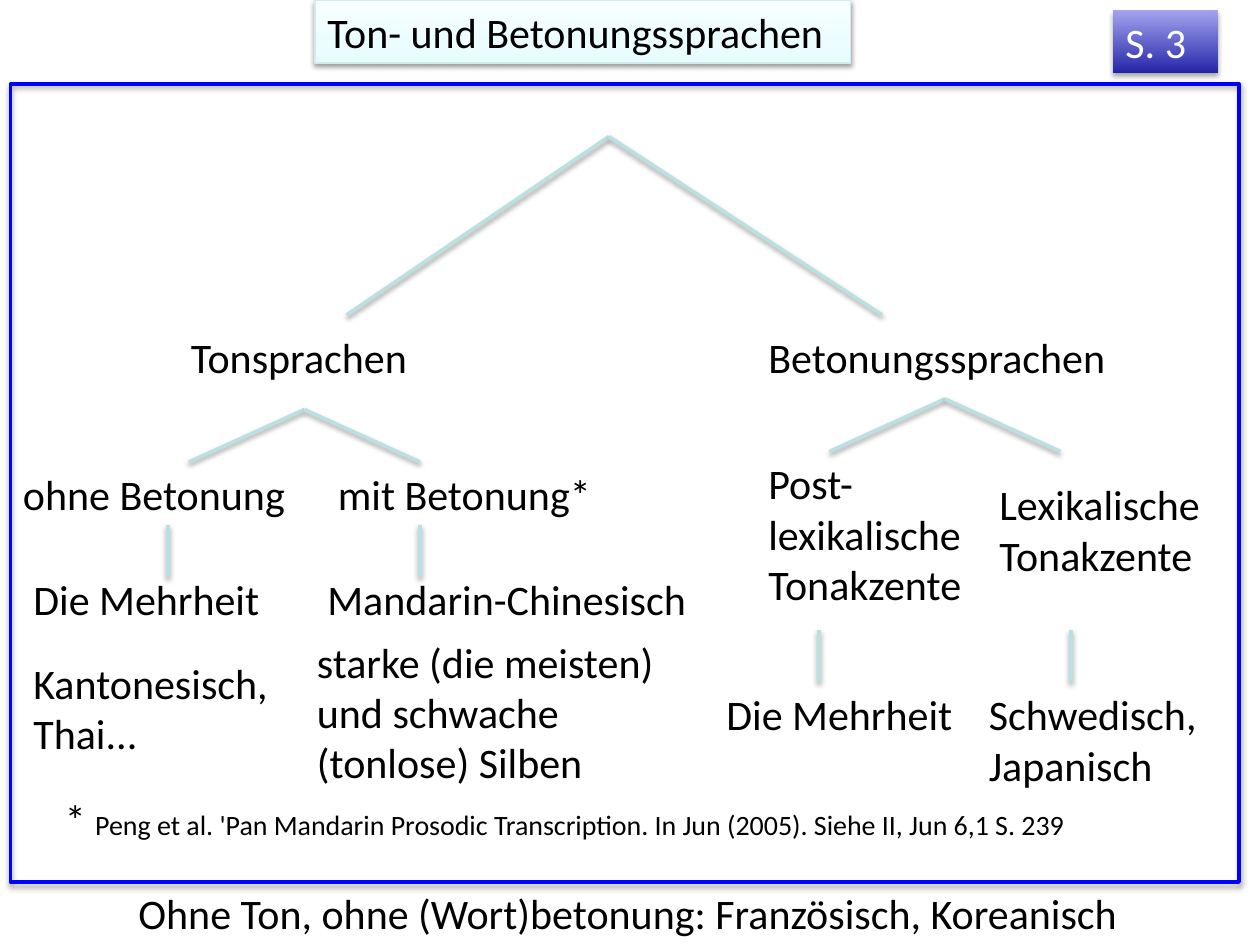
from copy import deepcopy

from lxml import etree
from pptx import Presentation
from pptx.dml.color import RGBColor
from pptx.enum.shapes import MSO_CONNECTOR, MSO_SHAPE
from pptx.enum.text import MSO_ANCHOR, MSO_AUTO_SIZE, PP_ALIGN
from pptx.oxml.ns import qn
from pptx.util import Pt

RECT = MSO_SHAPE.RECTANGLE
STRAIGHT = MSO_CONNECTOR.STRAIGHT
TOP = MSO_ANCHOR.TOP
GROW = MSO_AUTO_SIZE.SHAPE_TO_FIT_TEXT
LEFT = PP_ALIGN.LEFT

BLACK, WHITE, BLUE, BRANCH = "000000", "FFFFFF", "0000FF", "BBE0E3"
FRAME_FORMAT = {"vertical_anchor": TOP, "auto_size": GROW, "word_wrap": True}
LINE_HEIGHTS = {1: 36.5, 2: 65.5, 3: 94.5}
SOFT = {"alpha": 38, "dist": 1.6}
STRONG = {"alpha": 35, "dist": 1.8}

TITLE_STOPS = [(0, "E6FDFF"), (35, "ECFDFF"), (100, "F8FEFF")]
BADGE_STOPS = [(0, "2424A8"), (100, "A4A4EF")]

LABELS = [
    ("Tonsprachen", 102, 186, 150, 1),
    ("Betonungssprachen", 432, 186, 228, 1),
    ("ohne Betonung", 6, 264, 180, 1),
    ("mit Betonung*", 186, 264, 180, 1),
    ("Post-lexikalische Tonakzente", 432, 258, 150, 3),
    ("Lexikalische Tonakzente", 564, 270, 138, 2),
    ("Die Mehrheit", 12, 324, 150, 1),
    ("Mandarin-Chinesisch", 180, 324, 222, 1),
    ("Die Mehrheit", 408, 390, 156, 1),
    ("Schwedisch, Japanisch", 558, 390, 144, 2),
    ("Kantonesisch, Thai...", 12, 372, 156, 2),
    ("starke (die meisten) und schwache (tonlose) Silben", 174, 360, 228, 3),
    ("Ohne Ton, ohne (Wort)betonung: Französisch, Koreanisch", 72, 503.5, 594, 1),
]
FORKS = [
    ((348, 78), (198, 504), 180),
    ((174, 234), (108, 240), 264),
    ((540, 228), (474, 606), 258),
]
STEMS = [(96, 300), (240, 300), (468, 360), (612, 360)]
STEM_LENGTH = 30


def rgb(value):
    """Return the colour for a hex string."""
    return RGBColor.from_string(value)


class Slide:
    """Hold the style and the current slide."""

    font, size = "Calibri", 24

    def __init__(self, prs):
        """Add a blank slide."""
        self.s = prs.slides.add_slide(prs.slide_layouts[6])

    def shadow(self, sp, alpha, dist):
        """Give a shape or connector a shadow that falls straight down."""
        effects = etree.SubElement(sp._element.spPr, qn("a:effectLst"))
        outer = etree.SubElement(
            effects, qn("a:outerShdw"), blurRad=str(Pt(3.1)), dist=str(Pt(dist)),
            dir="5400000", rotWithShape="0")
        color = etree.SubElement(outer, qn("a:srgbClr"), val=BLACK)
        etree.SubElement(color, qn("a:alpha"), val=str(alpha * 1000))

    def fill_text(self, sp, runs, color=BLACK):
        """Put (text, size) runs into a shape as one paragraph."""
        tf = sp.text_frame
        for name, value in FRAME_FORMAT.items():
            setattr(tf, name, value)
        p = tf.paragraphs[0]
        p.alignment = LEFT
        for text, size in runs:
            r = p.add_run()
            r.text = text
            for name, value in {"name": self.font, "size": Pt(size)}.items():
                setattr(r.font, name, value)
            r.font.color.rgb = rgb(color)

    def label(self, runs, x, y, w, lines=1):
        """Add a text box as high as its number of lines."""
        if isinstance(runs, str):
            runs = [(runs, self.size)]
        tb = self.s.shapes.add_textbox(Pt(x), Pt(y), Pt(w), Pt(LINE_HEIGHTS[lines]))
        self.fill_text(tb, runs)

    def box(self, x, y, w, h, shadow, stops=(), line=None, text="", color=BLACK):
        """Add a rectangle with an optional gradient, outline and text."""
        sp = self.s.shapes.add_shape(RECT, Pt(x), Pt(y), Pt(w), Pt(h))
        if stops:
            self.gradient(sp, stops)
        else:
            sp.fill.background()
        if line:
            sp.line.color.rgb = rgb(line[0])
            sp.line.width = Pt(line[1])
        else:
            sp.line.fill.background()
        self.shadow(sp, **shadow)
        if text:
            self.fill_text(sp, [(text, self.size)], color)

    def gradient(self, sp, stops):
        """Fill a shape from bottom to top with (percent, colour) stops."""
        sp.fill.gradient()
        sp.fill.gradient_angle = 90
        gs_list = sp._element.spPr.find(".//" + qn("a:gsLst"))
        while len(gs_list) < len(stops):
            gs_list.append(deepcopy(gs_list[0]))
        for stop, (percent, color) in zip(sp.fill.gradient_stops, stops):
            stop.position = percent / 100
            stop.color.rgb = rgb(color)

    def branch(self, x1, y1, x2, y2):
        """Add one line of the tree."""
        line = self.s.shapes.add_connector(STRAIGHT, Pt(x1), Pt(y1), Pt(x2), Pt(y2))
        line.line.color.rgb = rgb(BRANCH)
        line.line.width = Pt(2)
        self.shadow(line, **SOFT)


def main():
    """Build the language tree and save it."""
    prs = Presentation()
    prs.slide_width, prs.slide_height = Pt(720), Pt(540)
    slide = Slide(prs)
    slide.box(180, 0, 306, 36, SOFT, TITLE_STOPS, ("D5E8EA", 0.75),
              "Ton- und Betonungssprachen")
    slide.box(6, 48, 702, 456, STRONG, line=(BLUE, 2.25))
    slide.box(636, 6, 60, 36, STRONG, BADGE_STOPS, text="S. 3", color=WHITE)
    for (x, y), ends, bottom in FORKS:
        for end in ends:
            slide.branch(x, y, end, bottom)
    for x, y in STEMS:
        slide.branch(x, y, x, y + STEM_LENGTH)
    for label in LABELS:
        slide.label(*label)
    slide.label([
        ("* ", 24),
        ("Peng et al. 'Pan Mandarin Prosodic Transcription. "
         "In Jun (2005). Siehe II, Jun 6,1 S. 239", 16),
    ], 30, 450, 642)
    prs.save("out.pptx")


if __name__ == "__main__":
    main()
